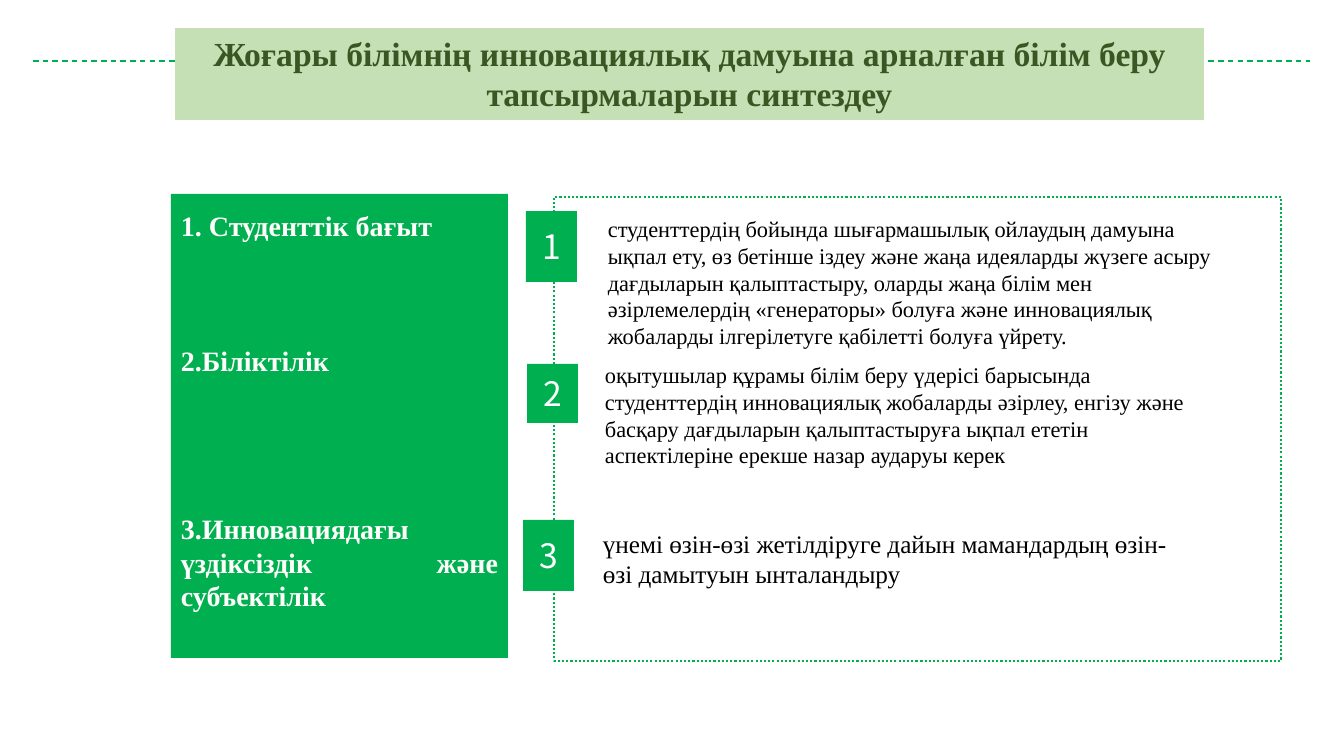
from lxml import etree
from pptx import Presentation
from pptx import util as u
from pptx.dml.color import RGBColor
from pptx.enum import dml, shapes, text
from pptx.oxml import ns

PX = 914400 / 100.8
SERIF, SANS = "Times New Roman", "Noto Sans CJK SC"
COLORS = {"green": "00B050", "pale": "C5E0B4", "dark": "385723",
          "cream": "FFFDFB", "white": "FFFFFF", "black": "000000"}
DIRECTIONS = [("1. Студенттік бағыт", 0), ("2.Біліктілік", 72),
              ("3.Инновациядағы үздіксіздік және субъектілік", 96)]
STEPS = [
    ((-28, 14, 51, 71), (44, 13, 639, 146), 16,
     "студенттердің бойында шығармашылық ойлаудың дамуына ықпал ету, өз бетінше "
     "іздеу және жаңа идеяларды жүзеге асыру дағдыларын қалыптастыру, оларды жаңа "
     "білім мен әзірлемелердің «генераторы» болуға және инновациялық жобаларды "
     "ілгерілетуге қабілетті болуға үйрету."),
    ((-27, 167, 51, 59), (41, 159, 620, 146), 16,
     "оқытушылар құрамы білім беру үдерісі барысында студенттердің инновациялық "
     "жобаларды әзірлеу, енгізу және басқару дағдыларын қалыптастыруға ықпал ететін "
     "аспектілеріне ерекше назар аударуы керек"),
    ((-31, 323, 51, 71), (39, 326, 611, 72), 18,
     "үнемі өзін-өзі жетілдіруге дайын мамандардың өзін-өзі дамытуын ынталандыру"),
]


def emu(*lengths):
    return [u.Emu(round(length * PX)) for length in lengths]


def color(name):
    return RGBColor.from_string(COLORS[name])


def write(paragraph, words, hue, **formats):
    paragraph.text = words
    for name, value in formats.items():
        setattr(paragraph.font, name, value)
    paragraph.font.color.rgb = color(hue)


def set_frame(frame, **formats):
    settings = {"word_wrap": True, "auto_size": text.MSO_AUTO_SIZE.NONE,
                "vertical_anchor": text.MSO_ANCHOR.TOP, **formats}
    for name, value in settings.items():
        setattr(frame, name, value)


def add_rectangle(slide, box, fill=None):
    rectangle = slide.shapes.add_shape(shapes.MSO_SHAPE.RECTANGLE, *emu(*box))
    rectangle.shadow.inherit = False
    rectangle.line.fill.background()
    if fill:
        rectangle.fill.solid()
        rectangle.fill.fore_color.rgb = color(fill)
    else:
        rectangle.fill.background()
    return rectangle


def set_line(line, width, dash):
    line.color.rgb = color("green")
    line.width = u.Pt(width)
    line.dash_style = dash


def add_heading(slide, box):
    left, top, width, height = box
    for start, end in ((left - 142, left + 330), (left + 664, left + 1135)):
        rule = slide.shapes.add_connector(
            shapes.MSO_CONNECTOR.STRAIGHT, *emu(start, top + 33, end, top + 33))
        set_line(rule.line, 1, dml.MSO_LINE.DASH)
        etree.SubElement(rule.element.spPr, ns.qn("a:effectLst"))

    heading = slide.shapes.title
    heading.element.getparent().append(heading.element)
    heading.left, heading.top, heading.width, heading.height = emu(*box)
    heading.fill.solid()
    heading.fill.fore_color.rgb = color("pale")
    set_frame(heading.text_frame)
    paragraph = heading.text_frame.paragraphs[0]
    write(paragraph, "Жоғары білімнің инновациялық дамуына арналған білім беру "
          "тапсырмаларын синтездеу", "dark", name=SERIF, size=u.Pt(24), bold=True)
    paragraph.alignment = text.PP_ALIGN.CENTER


def add_directions(slide, box):
    frame = add_rectangle(slide, box, "green").text_frame
    set_frame(frame, margin_top=emu(15)[0])
    for index, (direction, gap) in enumerate(DIRECTIONS):
        paragraph = frame.add_paragraph() if index else frame.paragraphs[0]
        write(paragraph, direction, "cream", name=SERIF, size=u.Pt(20), bold=True)
        paragraph.alignment = text.PP_ALIGN.JUSTIFY
        if gap:
            paragraph.space_before = u.Pt(gap)


def add_steps(slide, box):
    left, top = box[:2]
    border = add_rectangle(slide, box)
    set_line(border.line, 1.5, dml.MSO_LINE.ROUND_DOT)
    for number, (badge_box, detail_box, size, words) in enumerate(STEPS, 1):
        x, y, width, height = detail_box
        detail = slide.shapes.add_textbox(*emu(left + x, top + y, width, height))
        set_frame(detail.text_frame)
        write(detail.text_frame.paragraphs[0], words, "black",
              name=SERIF, size=u.Pt(size))

        x, y, width, height = badge_box
        badge = add_rectangle(slide, (left + x, top + y, width, height), "green")
        set_frame(badge.text_frame, vertical_anchor=text.MSO_ANCHOR.MIDDLE)
        digit = badge.text_frame.paragraphs[0]
        write(digit, str(number), "white", name=SANS, size=u.Pt(24))
        digit.alignment = text.PP_ALIGN.CENTER


def main():
    deck = Presentation()
    deck.slide_width, deck.slide_height = emu(1344, 756)
    slide = deck.slides.add_slide(deck.slide_layouts[5])
    add_directions(slide, (171, 194, 337, 464))
    add_steps(slide, (554, 197, 727, 464))
    add_heading(slide, (175, 28, 1029, 92))
    deck.save("out.pptx")


if __name__ == "__main__":
    main()
